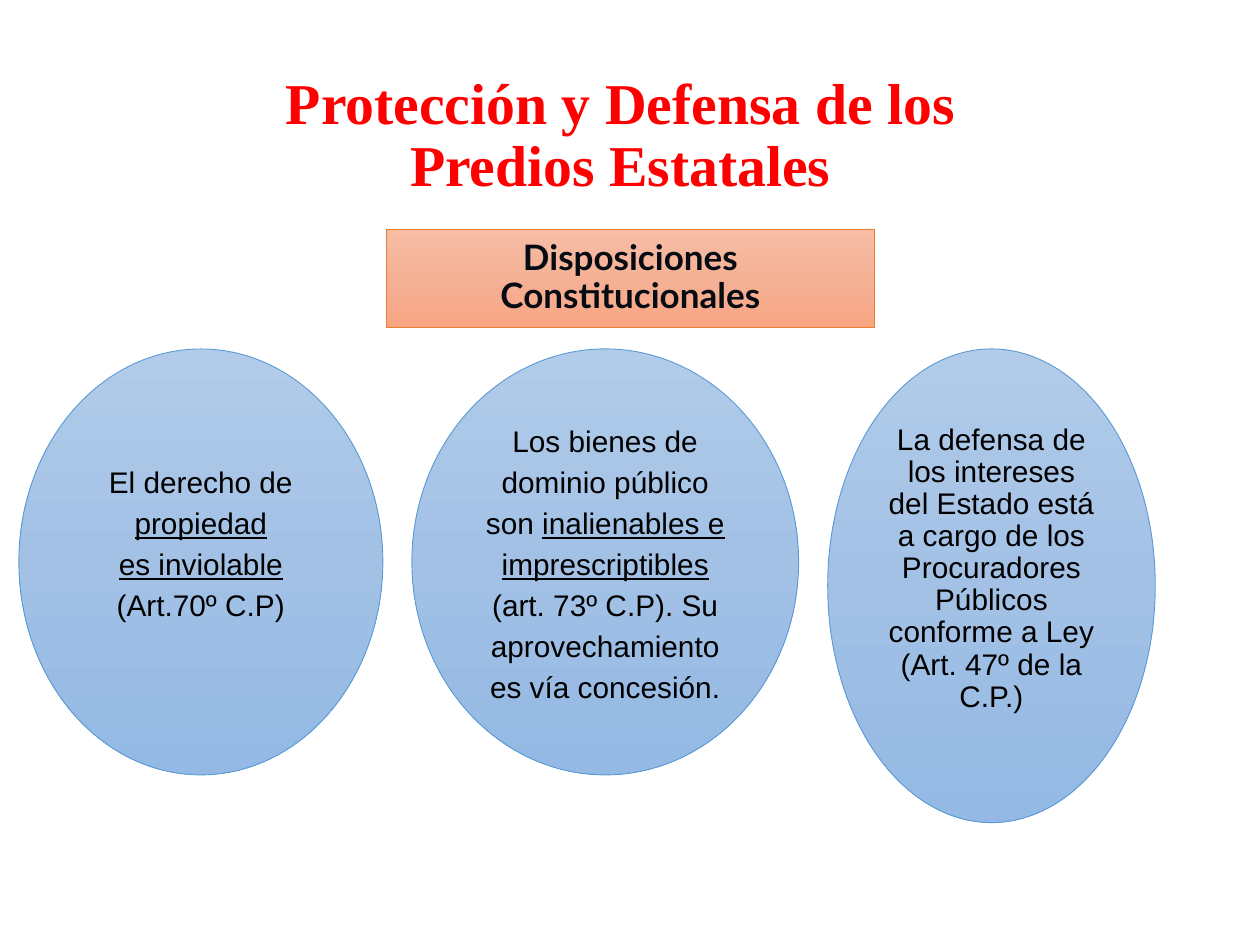
from copy import deepcopy
from typing import NamedTuple

from pptx import Presentation
from pptx.dml.color import RGBColor
from pptx.enum.shapes import MSO_SHAPE as Preset
from pptx.enum.text import MSO_ANCHOR as Anchor, PP_ALIGN as Align
from pptx.oxml.ns import qn
from pptx.util import Pt


class Span(NamedTuple):
    text: str
    underline: bool = False


class Style(NamedTuple):
    font: str
    size: float
    color: str
    bold: bool = False


class Panel(NamedTuple):
    preset: Preset
    left: float
    top: float
    width: float
    height: float
    gradient: tuple[str, str, str]
    outline: str
    style: Style
    paragraphs: list[list[Span]]
    line_spacing: float = 0.9
    anchor: Anchor = Anchor.TOP
    inset_top: float = 3.6


TITLE = Style("Times New Roman", 33, "FF0000", bold=True)
HEADING = Style("Lato", 20, "060B14", bold=True)
BODY = Style("Arial", 17, "000000")
ORANGE = ("F7BDA5", "F5B196", "F8A582")
BLUE = ("B1CBE9", "A3C1E5", "93B9E4")


def rgb(value: str) -> RGBColor:
    return RGBColor.from_string(value)


def write(frame, paragraphs: list[list[Span]], style: Style,
          spacing: float, anchor: Anchor) -> None:
    frame.word_wrap = True
    frame.vertical_anchor = anchor
    for index, spans in enumerate(paragraphs):
        paragraph = frame.add_paragraph() if index else frame.paragraphs[0]
        paragraph.alignment = Align.CENTER
        paragraph.line_spacing = spacing
        for span in spans:
            run = paragraph.add_run()
            run.text = span.text
            run.font.name = style.font
            run.font.size = Pt(style.size)
            run.font.bold = style.bold
            run.font.underline = span.underline
            run.font.color.rgb = rgb(style.color)


def fill_gradient(shape, colors: tuple[str, str, str]) -> None:
    fill = shape.fill
    fill.gradient()
    fill.gradient_angle = 270
    # The default gradient has two stops: add one in the middle
    stop_list = shape._element.spPr.find(qn("a:gradFill")).find(qn("a:gsLst"))
    stop_list.insert(1, deepcopy(stop_list[0]))
    for stop, position, color in zip(fill.gradient_stops, (0, 0.5, 1), colors):
        stop.position = position
        stop.color.rgb = rgb(color)


def draw_panel(slide, panel: Panel) -> None:
    shape = slide.shapes.add_shape(
        panel.preset, Pt(panel.left), Pt(panel.top), Pt(panel.width), Pt(panel.height))
    shape.shadow.inherit = False
    fill_gradient(shape, panel.gradient)
    shape.line.color.rgb = rgb(panel.outline)
    shape.line.width = Pt(0.5)
    shape.text_frame.margin_top = Pt(panel.inset_top)
    write(shape.text_frame, panel.paragraphs, panel.style,
          panel.line_spacing, panel.anchor)


def article(left: float, width: float, height: float,
            paragraphs: list[list[Span]], spacing: float,
            inset_top: float = 3.6) -> Panel:
    return Panel(Preset.OVAL, left, 199.4, width, height, BLUE, "5B9BD5", BODY,
                 paragraphs, spacing, inset_top=inset_top)


PANELS = [
    # Heading of the constitutional provisions
    Panel(Preset.RECTANGLE, 221, 131, 278.6, 56.2, ORANGE, "ED7D31", HEADING,
          [[Span("Disposiciones Constitucionales")]], anchor=Anchor.MIDDLE),
    # One ellipse for each article
    article(10.8, 208, 243.4, [
        [Span("El derecho de "), Span("propiedad", True)],
        [Span("es inviolable ", True), Span("(Art.70º C.P)")],
    ], 1.15, inset_top=27),
    article(235.4, 221, 243.4, [[
        Span("Los bienes de dominio público son "),
        Span("inalienables e imprescriptibles ", True),
        Span("(art. 73º C.P). Su aprovechamiento es vía concesión."),
    ]], 1.15),
    article(473, 187.2, 270.7, [[
        Span("La defensa de los intereses del Estado está a cargo de los "
             "Procuradores Públicos conforme a Ley (Art. 47º de la C.P.)"),
    ]], 0.9),
]


def main() -> None:
    deck = Presentation()
    deck.slide_width, deck.slide_height = Pt(720), Pt(540)
    slide = deck.slides.add_slide(deck.slide_layouts[6])

    for panel in PANELS:
        draw_panel(slide, panel)

    # Slide title
    title = slide.shapes.add_textbox(Pt(103.7), Pt(37.4), Pt(501.8), Pt(81.4))
    write(title.text_frame, [[Span("Protección y Defensa de los Predios Estatales")]],
          TITLE, 0.9, Anchor.MIDDLE)

    deck.save("out.pptx")


if __name__ == "__main__":
    main()
